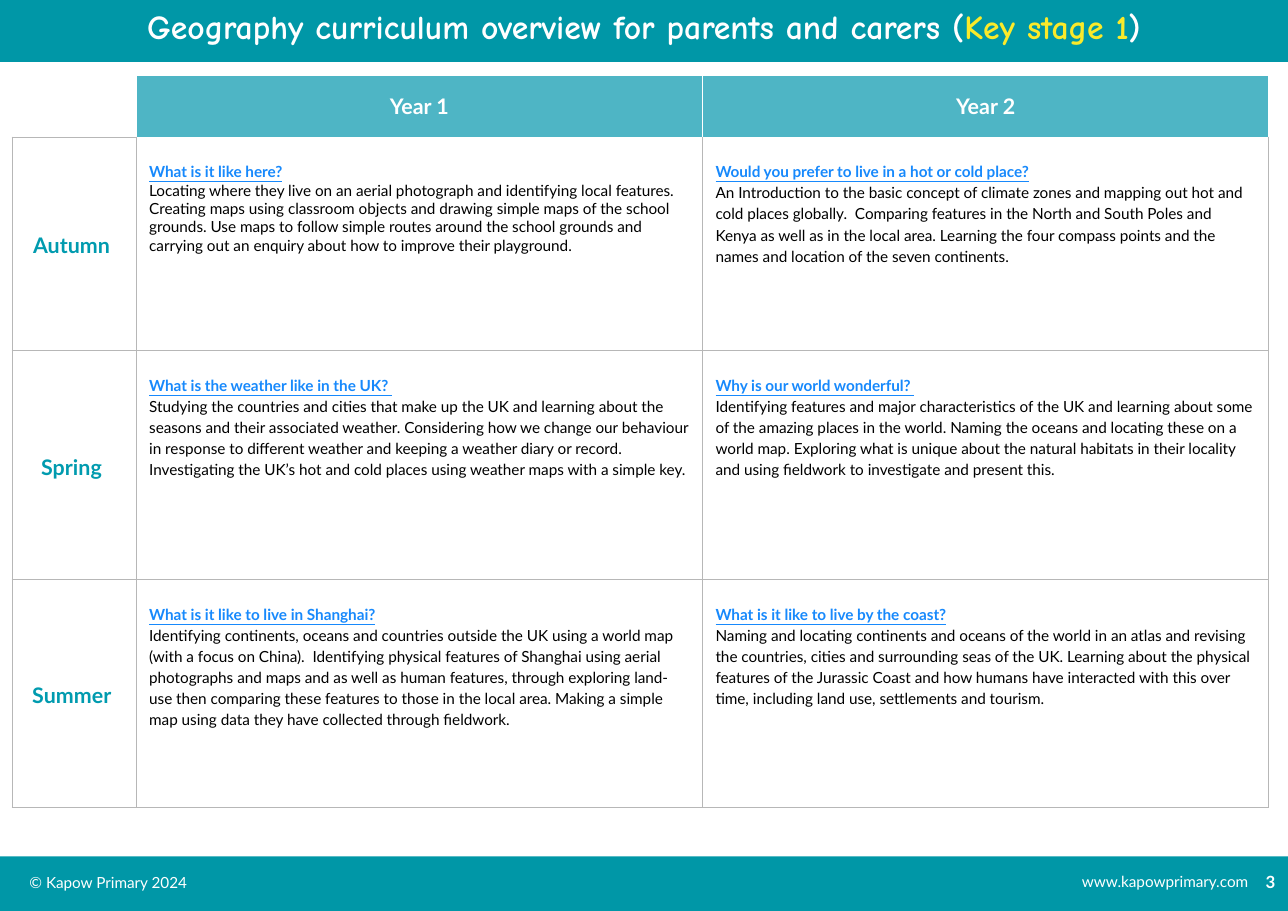
from lxml import etree
from pptx import Presentation
from pptx.dml.color import RGBColor
from pptx.enum import shapes, text
from pptx.oxml import ns
from pptx.util import Cm, Pt

COLOURS = {
    "teal": "0097A7", "header": "4EB5C5", "season": "009BAF", "link": "1789FC",
    "grid": "B7B7B7", "white": "FFFFFF", "black": "000000", "yellow": "FAEA2A",
}
ALIGN = text.PP_ALIGN
YEARS = ["Year 1", "Year 2"]
COLUMN_WIDTHS = [2.86, 13.06, 13.06]
ROW_HEIGHTS = [1.42, 4.92, 5.28, 5.26]

# Season, then a (heading, description, line spacing) for each year
SEASONS = [
    ("Autumn ", [
        ("What is it like here?",
         "Locating where they live on an aerial photograph and identifying local features.  "
         "Creating maps using classroom objects and drawing simple maps of the school grounds. "
         "Use maps to follow simple routes around the school grounds and carrying out an "
         "enquiry about how to improve their playground.", 1.0),
        ("Would you prefer to live in a hot or cold place?",
         "An Introduction to the basic concept of climate zones and mapping out hot and cold "
         "places globally.  Comparing features in the North and South Poles and Kenya as well "
         "as in the local area. Learning the four compass points and the names and location of "
         "the seven continents.", 1.15),
    ]),
    ("Spring ", [
        ("What is the weather like in the UK? ",
         "Studying the countries and cities that make up the UK and learning about the seasons "
         "and their associated weather. Considering how we change our behaviour in response to "
         "different weather and keeping a weather diary or record. Investigating the UK’s hot "
         "and cold places using weather maps with a simple key.", 1.15),
        ("Why is our world wonderful? ",
         "Identifying features and major characteristics of the UK and learning about some of "
         "the amazing places in the world. Naming the oceans and locating these on a world map. "
         "Exploring what is unique about the natural habitats in their locality and using "
         "fieldwork to investigate and present this.", 1.15),
    ]),
    ("Summer ", [
        ("What is it like to live in Shanghai?",
         "Identifying continents, oceans and countries outside the UK using a world map (with a "
         "focus on China).  Identifying physical features of Shanghai using aerial photographs "
         "and maps and as well as human features, through exploring land-use then comparing "
         "these features to those in the local area. Making a simple map using data they have "
         "collected through fieldwork.", 1.15),
        ("What is it like to live by the coast?",
         "Naming and locating continents and oceans of the world in an atlas and revising the "
         "countries, cities and surrounding seas of the UK. Learning about the physical "
         "features of the Jurassic Coast and how humans have interacted with this over time, "
         "including land use, settlements and tourism.", 1.15),
    ]),
]


def rgb(name):
    return RGBColor.from_string(COLOURS[name])


def format_font(font, size, colour, bold=False, name="Lato"):
    font.name = name
    font.size = Pt(size)
    font.bold = bold
    font.color.rgb = rgb(colour)


def set_margins(box, x, y):
    box.margin_left = box.margin_right = Cm(x)
    box.margin_top = box.margin_bottom = Cm(y)


def add_bar(s, top, height):
    """Add a full-width teal bar behind the title."""
    bar = s.shapes.add_shape(shapes.MSO_SHAPE.RECTANGLE, 0, Cm(top), Cm(29.7), Cm(height))
    bar.shadow.inherit = False
    bar.fill.solid()
    bar.fill.fore_color.rgb = rgb("teal")
    bar.line.fill.background()
    s.shapes.title.element.addprevious(bar.element)


def add_title(s, parts):
    title = s.shapes.title
    title.left, title.top, title.width, title.height = Cm(0), Cm(-0.08), Cm(29.7), Cm(1.5)
    tf = title.text_frame
    tf.auto_size = text.MSO_AUTO_SIZE.NONE
    tf.vertical_anchor = text.MSO_ANCHOR.TOP
    set_margins(tf, 0.32, 0.32)
    p = tf.paragraphs[0]
    p.alignment = ALIGN.CENTER
    p.line_spacing = 0.9
    for words, colour in parts:
        r = p.add_run()
        r.text = words
        format_font(r.font, 22, colour, True, "Comic Neue")


def add_footer_text(s, words, left, top, width, align, margin=0.25, size=10, bold=False):
    tf = s.shapes.add_textbox(Cm(left), Cm(top), Cm(width), Cm(0.94)).text_frame
    tf.word_wrap = True
    set_margins(tf, margin, margin)
    tf.text = words
    p = tf.paragraphs[0]
    p.alignment = align
    format_font(p.runs[0].font, size, "white", bold)


def set_borders(cell, **sides):
    """Draw cell borders; a side that is not named gets no line."""
    tcPr = cell._tc.get_or_add_tcPr()
    for i, side in enumerate("LRTB"):
        ln = etree.Element(ns.qn(f"a:ln{side}"), w=str(Pt(0.75)))
        if side in sides:
            fill = etree.SubElement(ln, ns.qn("a:solidFill"))
            etree.SubElement(fill, ns.qn("a:srgbClr"), val=COLOURS[sides[side]])
        else:
            etree.SubElement(ln, ns.qn("a:noFill"))
        tcPr.insert(i, ln)


def fill_cell(cell, colour):
    cell.fill.solid()
    cell.fill.fore_color.rgb = rgb(colour)
    set_margins(cell, 0.3, 0.38)


def write_label(cell, words, colour, spacing=1.0):
    cell.vertical_anchor = text.MSO_ANCHOR.MIDDLE
    cell.text_frame.text = words
    p = cell.text_frame.paragraphs[0]
    p.alignment = ALIGN.CENTER
    p.line_spacing = spacing
    format_font(p.runs[0].font, 14, colour, True)


def write_unit(cell, heading, description, spacing):
    tf = cell.text_frame
    tf.text = f"{heading}\n{description}"
    head, body = tf.paragraphs
    head.line_spacing, body.line_spacing = 1.5, spacing
    format_font(head.runs[0].font, 10, "link", True)
    head.runs[0].font.underline = True
    format_font(body.runs[0].font, 10, "black")


def add_curriculum_table(s):
    table = s.shapes.add_table(
        len(ROW_HEIGHTS), len(COLUMN_WIDTHS), Cm(0.28), Cm(1.74),
        Cm(sum(COLUMN_WIDTHS)), Cm(sum(ROW_HEIGHTS))).table
    table.first_row = table.horz_banding = False
    for column, width in zip(table.columns, COLUMN_WIDTHS):
        column.width = Cm(width)
    for row, height in zip(table.rows, ROW_HEIGHTS):
        row.height = Cm(height)

    corner = table.cell(0, 0)
    corner.fill.background()
    set_borders(corner, R="white", B="grid")
    for c, year in enumerate(YEARS, 1):
        cell = table.cell(0, c)
        fill_cell(cell, "header")
        set_borders(cell, L="white", R="white", T="white", B="white")
        write_label(cell, year, "white")

    for r, (season, units) in enumerate(SEASONS, 1):
        for c in range(len(COLUMN_WIDTHS)):
            cell = table.cell(r, c)
            fill_cell(cell, "white")
            top = "white" if r == 1 and c > 0 else "grid"
            set_borders(cell, L="grid", R="grid", T=top, B="grid")
        write_label(table.cell(r, 0), season, "season", 1.15)
        for c, unit in enumerate(units, 1):
            write_unit(table.cell(r, c), *unit)


def main():
    prs = Presentation()
    prs.slide_width, prs.slide_height = Cm(29.7), Cm(21)
    s = prs.slides.add_slide(prs.slide_layouts[5])
    add_bar(s, 0, 1.43)
    add_bar(s, 19.74, 1.26)
    add_title(s, [("Geography curriculum overview for parents and carers (", "white"),
                  ("Key stage 1", "yellow"), (")", "white")])
    add_curriculum_table(s)
    add_footer_text(s, "© Kapow Primary 2024", 0.43, 19.91, 5, ALIGN.LEFT)
    add_footer_text(s, "www.kapowprimary.com", 24.03, 19.89, 5, ALIGN.RIGHT)
    add_footer_text(s, "3", 27.91, 19.86, 1.78, ALIGN.RIGHT, 0.28, 11, True)
    prs.save("out.pptx")


if __name__ == "__main__":
    main()
